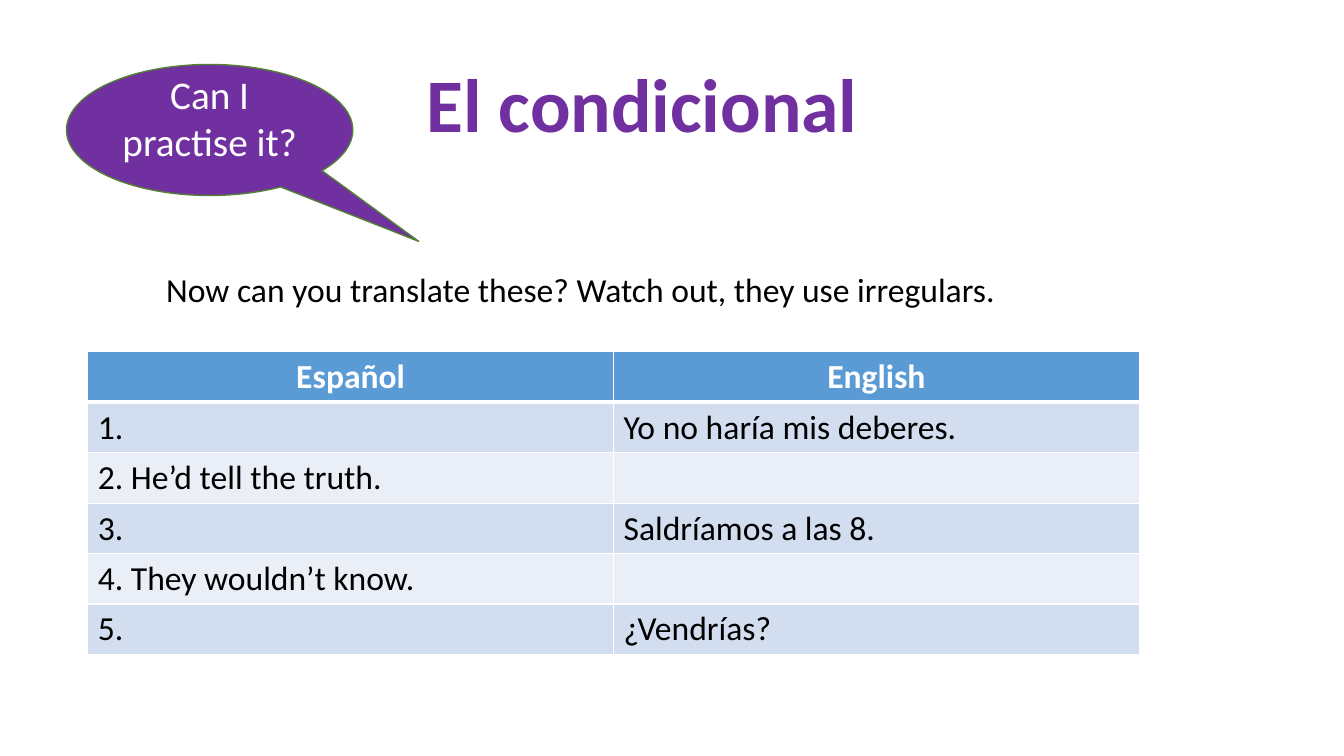
import pptx
import pptx.dml.color
import pptx.enum.shapes
import pptx.enum.text
import pptx.oxml
import pptx.oxml.ns
import pptx.util
from pptx.util import Inches

RGBColor = pptx.dml.color.RGBColor
PURPLE = RGBColor(0x70, 0x30, 0xA0)
GREEN = RGBColor(0x53, 0x80, 0x35)
WHITE = RGBColor(0xFF, 0xFF, 0xFF)
BLACK = RGBColor(0x00, 0x00, 0x00)
HEADER_BLUE = RGBColor(0x5B, 0x9B, 0xD5)
BAND_BLUES = (RGBColor(0xEA, 0xEF, 0xF7), RGBColor(0xD2, 0xDE, 0xEF))
CENTER = pptx.enum.text.PP_ALIGN.CENTER

SENTENCES = [
    ("Español", "English"),
    ("1.", "Yo no haría mis deberes."),
    ("2. He’d tell the truth.", ""),
    ("3.", "Saldríamos a las 8."),
    ("4. They wouldn’t know.", ""),
    ("5.", "¿Vendrías?"),
]


def apply_format(target, values):
    for attribute, value in values.items():
        setattr(target, attribute, value)


def write(frame, wording, size, color, bold=False, alignment=None):
    paragraph = frame.paragraphs[0]
    paragraph.alignment = alignment
    run = paragraph.add_run()
    run.text = wording
    apply_format(run.font, {"name": "Calibri", "size": pptx.util.Pt(size), "bold": bold})
    run.font.color.rgb = color


def add_label(slide, place, wording, size, color, bold=False):
    frame = slide.shapes.add_textbox(*map(Inches, place)).text_frame
    apply_format(frame, {
        "word_wrap": False,
        "auto_size": pptx.enum.text.MSO_AUTO_SIZE.SHAPE_TO_FIT_TEXT,
    })
    write(frame, wording, size, color, bold)


def add_callout(slide, place, wording):
    callout = slide.shapes.add_shape(
        pptx.enum.shapes.MSO_SHAPE.OVAL_CALLOUT, *map(Inches, place))
    callout.adjustments[0] = 0.73
    callout.adjustments[1] = 0.85
    callout.shadow.inherit = False
    callout.fill.solid()
    callout.fill.fore_color.rgb = PURPLE
    callout.line.color.rgb = GREEN
    callout.line.width = pptx.util.Pt(1)
    apply_format(callout.text_frame, {
        "word_wrap": True,
        "vertical_anchor": pptx.enum.text.MSO_ANCHOR.MIDDLE,
        "margin_bottom": Inches(0.3),
    })
    write(callout.text_frame, wording, 28, WHITE, alignment=CENTER)


def add_borders(cell, widths):
    properties = cell._tc.get_or_add_tcPr()
    for side, width in widths.items():
        properties.append(pptx.oxml.parse_xml(
            f'<a:ln{side} {pptx.oxml.ns.nsdecls("a")} w="{pptx.util.Pt(width)}">'
            f'<a:solidFill><a:srgbClr val="{WHITE}"/></a:solidFill></a:ln{side}>'))


def add_sentence_table(slide, place, sentences):
    table = slide.shapes.add_table(
        len(sentences), len(sentences[0]), *map(Inches, place)).table
    for row, pair in enumerate(sentences):
        header = row == 0
        for column, wording in enumerate(pair):
            cell = table.cell(row, column)
            add_borders(cell, {"L": 1, "R": 1, "T": 3 if row == 1 else 1,
                               "B": 3 if header else 1})
            cell.fill.solid()
            cell.fill.fore_color.rgb = HEADER_BLUE if header else BAND_BLUES[row % 2]
            if wording:
                write(cell.text_frame, wording, 24, WHITE if header else BLACK,
                      header, CENTER if header else None)


def main():
    presentation = pptx.Presentation()
    apply_format(presentation, {"slide_width": Inches(13.33), "slide_height": Inches(7.5)})
    slide = presentation.slides.add_slide(presentation.slide_layouts[6])
    add_label(slide, (4.13, 0.52, 4.52, 1.01), "El condicional", 54, PURPLE, True)
    add_callout(slide, (0.66, 0.64, 2.84, 1.3), "Can I practise it?")
    add_label(slide, (1.55, 2.62, 8.5, 0.5),
              "Now can you translate these? Watch out, they use irregulars.", 24, BLACK)
    add_sentence_table(slide, (0.87, 3.49, 10.43, 3), SENTENCES)
    presentation.save("out.pptx")


if __name__ == "__main__":
    main()
